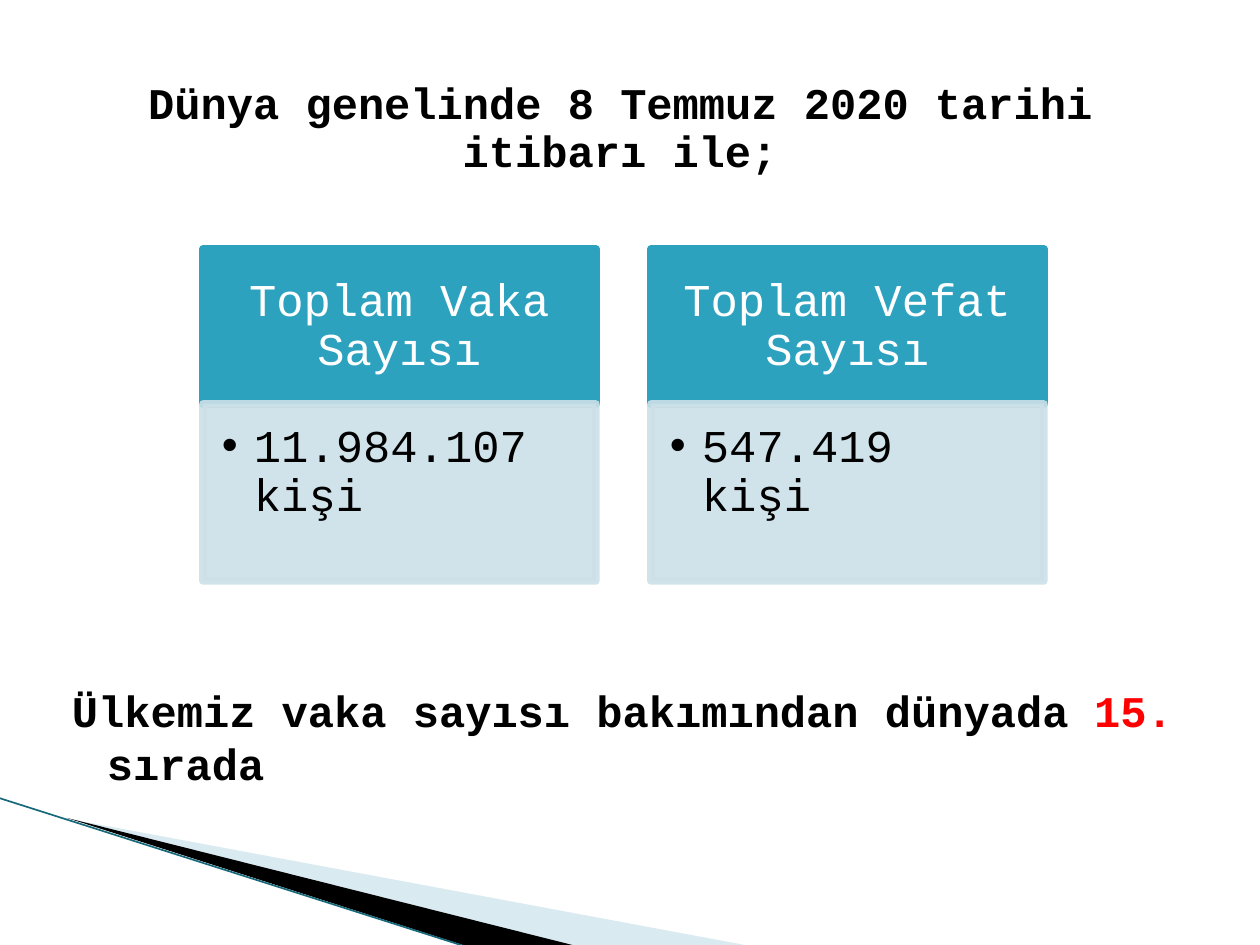
"""Build a slide with worldwide case and death totals for 8 July 2020."""
from lxml.etree import SubElement
from pptx import Presentation
from pptx.dml.color import RGBColor
from pptx.enum.shapes import MSO_CONNECTOR, MSO_SHAPE
from pptx.enum.text import MSO_ANCHOR, PP_ALIGN
from pptx.oxml.ns import qn
from pptx.util import Pt

PX = 914400 / 126
COLORS = {
    "black": "000000",
    "white": "FFFFFF",
    "red": "FF0000",
    "teal": "2DA2BF",
    "pale": "CDE0E8",
    "wedge": "A0CBDC",
    "edge": "16697A",
}


def paint(fill, color, alpha=100):
    fill.solid()
    fill.fore_color.rgb = RGBColor.from_string(COLORS[color])
    if alpha < 100:
        element = fill._xPr.find(qn("a:solidFill"))[0]
        SubElement(element, qn("a:alpha"), val=str(alpha * 1000))


def write_text(shape, *runs, size=25, bold=False, align=PP_ALIGN.LEFT, anchor=MSO_ANCHOR.TOP,
               insets=(13, 6, 13, 6), left=0, first=0, spacing=1.0, bullet=False):
    frame = shape.text_frame
    frame.word_wrap = True
    frame.vertical_anchor = anchor
    (frame.margin_left, frame.margin_top,
     frame.margin_right, frame.margin_bottom) = [int(inset * PX) for inset in insets]
    paragraph = frame.paragraphs[0]
    properties = paragraph._p.get_or_add_pPr()
    properties.set("marL", str(int(left * PX)))
    properties.set("indent", str(int(first * PX)))
    if bullet:
        SubElement(properties, qn("a:buFont"), typeface="Arial")
        SubElement(properties, qn("a:buChar"), char="•")
    paragraph.alignment = align
    paragraph.line_spacing = spacing
    for text, color in runs:
        run = paragraph.add_run()
        run.text = text
        run.font.name = "Courier New"
        run.font.size = Pt(size)
        run.font.bold = bold
        run.font.color.rgb = RGBColor.from_string(COLORS[color])


presentation = Presentation()
presentation.slide_width = int(1260 * PX)
presentation.slide_height = int(945 * PX)
slide = presentation.slides.add_slide(presentation.slide_layouts[6])
shapes = slide.shapes

wedges = [
    ("wedge", 40, [(69, 819), (750, 946), (575, 946)]),
    ("black", 100, [(67, 818), (576, 946), (469, 947)]),
]
for color, alpha, points in wedges:
    builder = shapes.build_freeform(*points[0], scale=PX)
    builder.add_line_segments(points[1:], close=True)
    wedge = builder.convert_to_shape()
    wedge.shadow.inherit = False
    wedge.line.fill.background()
    paint(wedge.fill, color, alpha)

edge = shapes.add_connector(
    MSO_CONNECTOR.STRAIGHT, *[int(value * PX) for value in (-1, 798, 467, 947)])
edge.line.width = Pt(0.95)
paint(edge.line.fill, "edge")
SubElement(edge._element.spPr, qn("a:effectLst"))

ranking = shapes.add_textbox(*[int(value * PX) for value in (44, 678, 1162, 110)])
write_text(ranking, ("Ülkemiz vaka sayısı bakımından dünyada ", "black"), ("15. ", "red"),
           ("sırada", "black"), bold=True, left=50, first=-35)

cards = [("Toplam Vaka Sayısı", "11.984.107 kişi"), ("Toplam Vefat Sayısı", "547.419 kişi")]
for column, (heading, total) in enumerate(cards):
    parts = [
        (249, 155, "teal", 100, (heading, "white"),
         {"align": PP_ALIGN.CENTER, "anchor": MSO_ANCHOR.MIDDLE, "insets": (25, 15, 25, 15)}),
        (404, 177, "pale", 90, (total, "black"),
         {"insets": (19, 19, 25, 29), "left": 32, "first": -32, "bullet": True}),
    ]
    for top, height, color, alpha, run, layout in parts:
        card = shapes.add_shape(
            MSO_SHAPE.RECTANGLE,
            *[int(value * PX) for value in (203 + 448 * column, top, 393, height)])
        card.shadow.inherit = False
        card.line.width = Pt(4.33)
        paint(card.fill, color, alpha)
        paint(card.line.fill, color, alpha)
        SubElement(card.line._ln, qn("a:round"))
        write_text(card, run, size=26, spacing=0.9, **layout)

title = shapes.add_textbox(*[int(value * PX) for value in (74, 76, 1042, 110)])
write_text(title, ("Dünya genelinde 8 Temmuz 2020 tarihi itibarı ile;", "black"),
           bold=True, align=PP_ALIGN.CENTER, left=50, spacing=0.9)

presentation.save("out.pptx")
